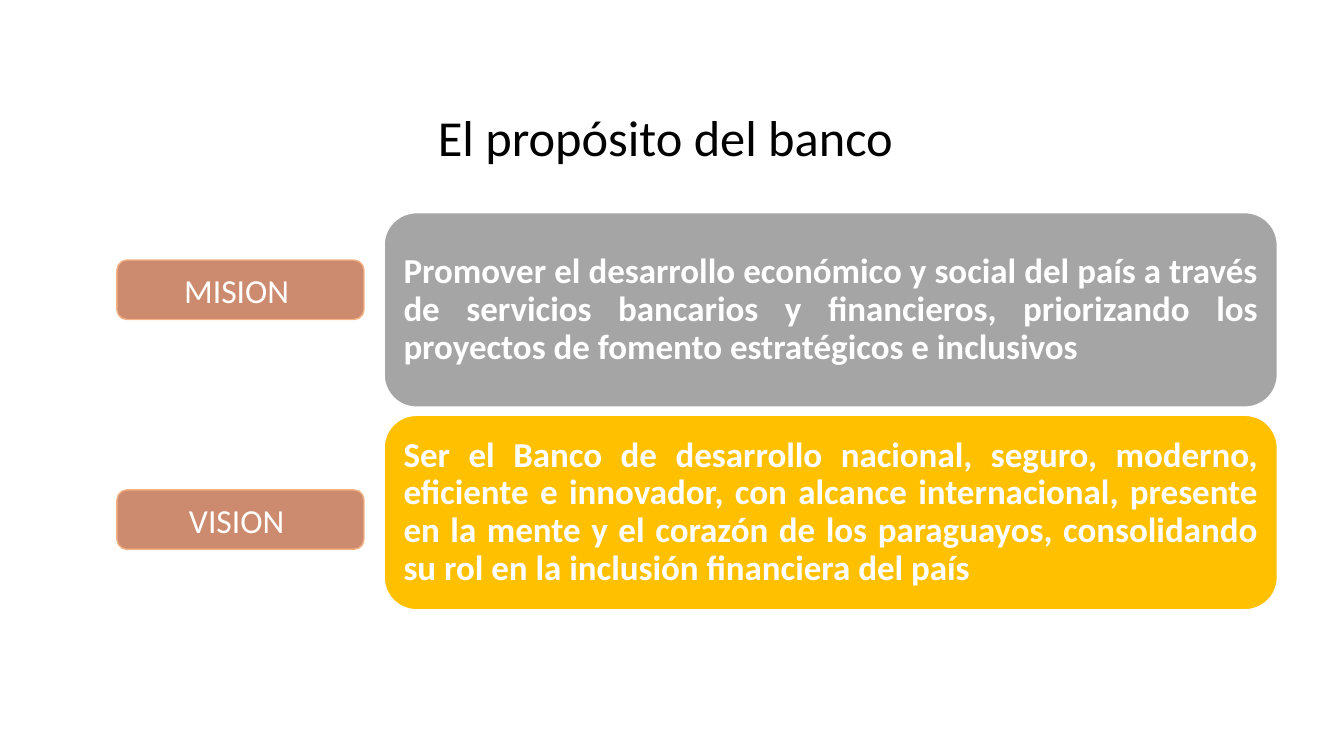
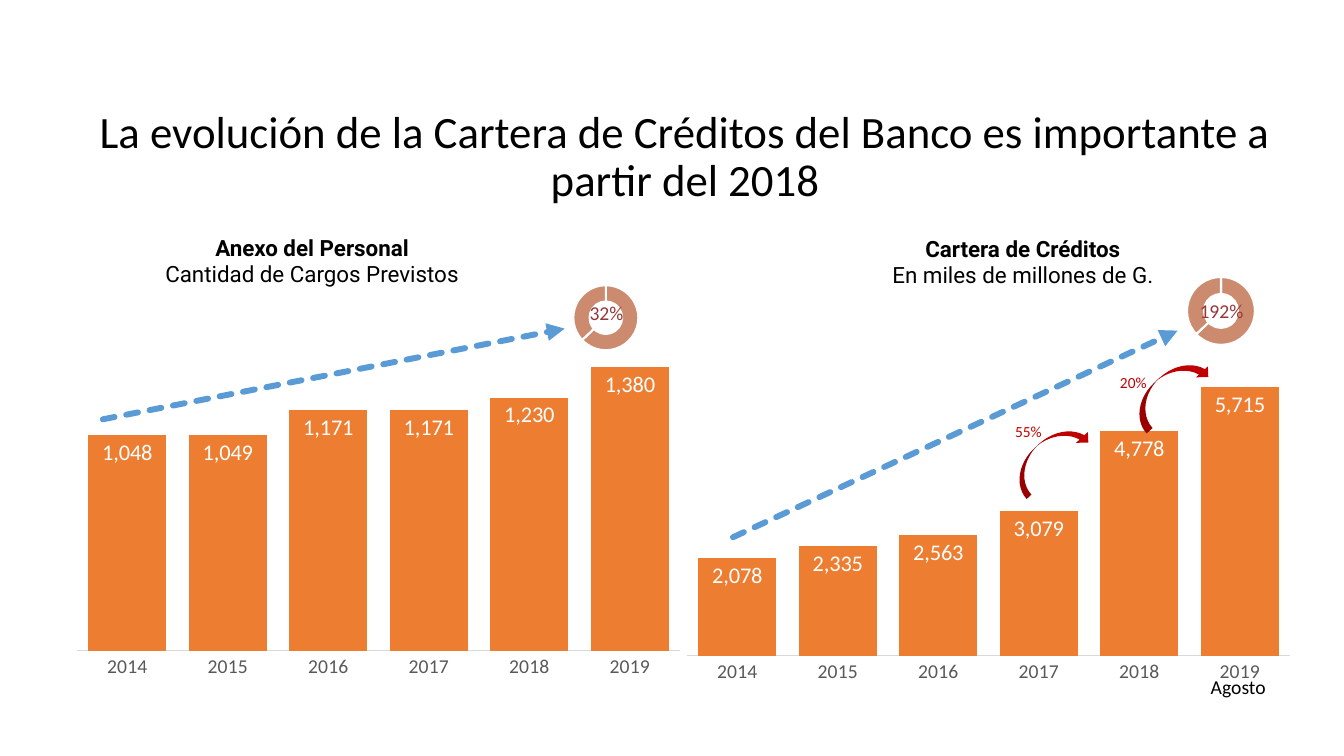
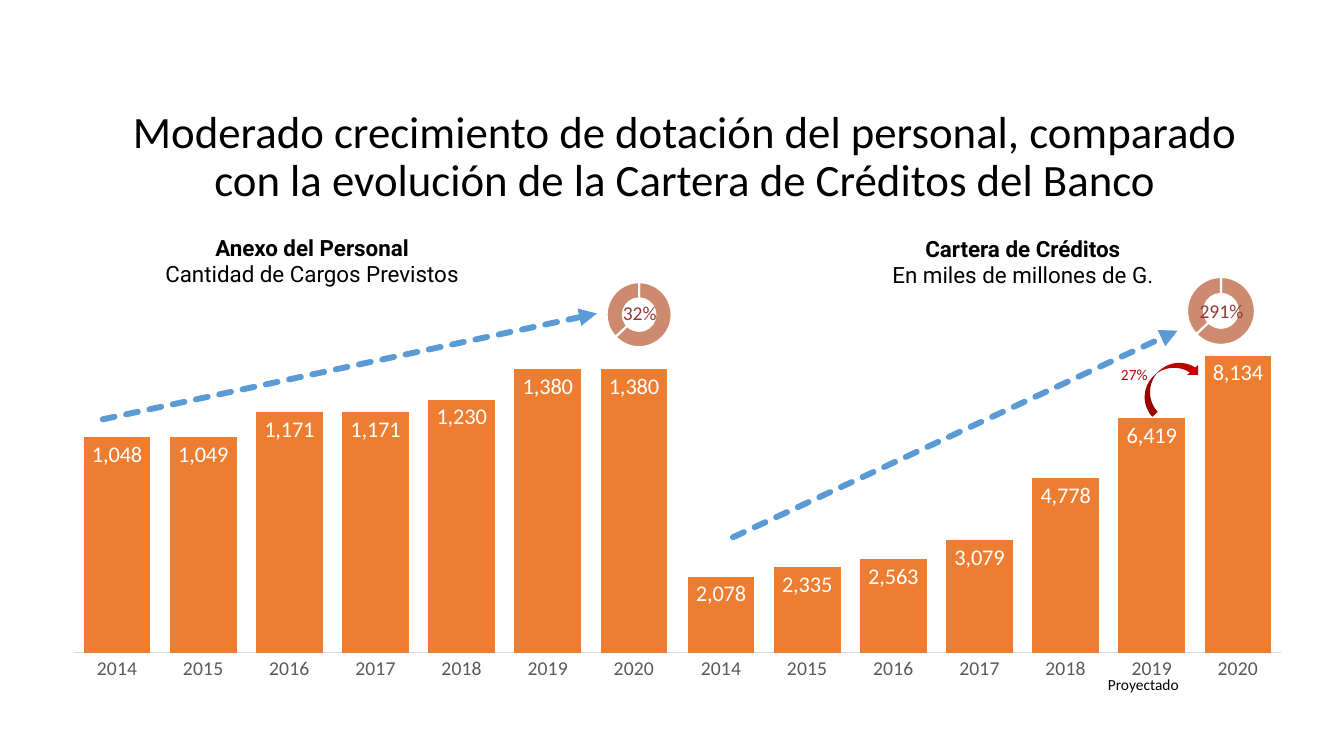
"""Three slides on a bank's purpose, staff and loan book."""
from dataclasses import dataclass

from lxml.etree import SubElement as Sub
from pptx import Presentation
from pptx.chart.data import CategoryChartData as Data
from pptx.dml.color import RGBColor as Rgb
from pptx.enum.chart import XL_CHART_TYPE as Kind
from pptx.enum.chart import XL_LABEL_POSITION as Spot
from pptx.enum.chart import XL_TICK_MARK as Tick
from pptx.enum.shapes import MSO_CONNECTOR as Link
from pptx.enum.shapes import MSO_SHAPE as Form
from pptx.enum.text import MSO_ANCHOR as Anchor
from pptx.enum.text import PP_ALIGN as Align
from pptx.oxml.ns import qn
from pptx.util import Pt

SCALE = 9144


@dataclass(frozen=True)
class Theme:
    """Fonts, colours and type sizes."""
    font: str = "Calibri"
    head: str = "Roboto"
    ink: str = "000000"
    white: str = "FFFFFF"
    gray: str = "A5A5A5"
    gold: str = "FFC000"
    clay: str = "CC8B6E"
    peach: str = "F4B183"
    bar: str = "ED7D31"
    axis: str = "595959"
    rule: str = "D9D9D9"
    trend: str = "5B9BD5"
    red: str = "C00000"
    wine: str = "943838"
    big: int = 36
    title: int = 32
    body: int = 25
    tag: int = 24
    label: int = 16
    note: int = 14
    small: int = 11


T = Theme()


def rgb(code):
    """Turn a hex code into a colour."""
    return Rgb.from_string(code)


def px(*vals):
    """Turn px lengths into EMU."""
    return [val * SCALE for val in vals]


def style(font, size, color, name=T.font, bold=False):
    """Set the look of a font."""
    font.size, font.name, font.bold = Pt(size), name, bold
    font.color.rgb = rgb(color)


def write(frame, text, size=T.note, color=T.ink, name=T.font, bold=0,
          align=Align.CENTER, anchor=Anchor.TOP, lead=1.0):
    """Fill a frame; the first `bold` lines are bold."""
    frame.word_wrap = True
    frame.vertical_anchor = anchor
    for num, line in enumerate(text.split("\n")):
        para = frame.add_paragraph() if num else frame.paragraphs[0]
        para.alignment, para.line_spacing = align, lead
        run = para.add_run()
        run.text = line
        style(run.font, size, color, name, num < bold)


class Deck:
    """Holds the file and the current slide."""

    def __init__(self):
        """Open an empty wide deck."""
        self.file = Presentation()
        self.file.slide_width, self.file.slide_height = px(1333, 750)
        self.slide = None

    def page(self, title, box, size=T.title):
        """Start a slide with its title."""
        self.slide = self.file.slides.add_slide(self.file.slide_layouts[6])
        self.text(title, *box, size=size, anchor=Anchor.MIDDLE, lead=0.9)

    def text(self, text, x, y, w, h, **fmt):
        """Add a text box."""
        box = self.slide.shapes.add_textbox(*px(x, y, w, h))
        write(box.text_frame, text, **fmt)

    def shape(self, form, x, y, w, h, fill, edge=None):
        """Add a flat preset shape."""
        item = self.slide.shapes.add_shape(form, *px(x, y, w, h))
        item.shadow.inherit = False
        item.fill.solid()
        item.fill.fore_color.rgb = rgb(fill)
        if edge:
            item.line.color.rgb = rgb(edge)
            item.line.width = Pt(1)
        else:
            item.line.fill.background()
        return item

    def panel(self, text, x, y, w, h, fill, edge=T.white, **fmt):
        """Add a rounded panel with text."""
        item = self.shape(Form.ROUNDED_RECTANGLE, x, y, w, h, fill, edge)
        write(item.text_frame, text, color=T.white, anchor=Anchor.MIDDLE, **fmt)

    def bend(self, x, y, w, h, thick=0.25):
        """Add a curved growth arrow."""
        item = self.shape(Form.CURVED_LEFT_ARROW, x, y, w, h, T.red)
        item.adjustments[0] = thick
        item.rotation = 227.5

    def trend(self, *ends):
        """Add a dashed trend arrow."""
        line = self.slide.shapes.add_connector(Link.STRAIGHT, *px(*ends))
        line.line.color.rgb = rgb(T.trend)
        line.line.width = Pt(4.25)
        prop = line.element.spPr
        edge = prop.find(qn("a:ln"))
        edge.set("cap", "rnd")
        Sub(edge, qn("a:prstDash"), val="sysDash")
        Sub(edge, qn("a:tailEnd"), type="triangle")
        Sub(prop, qn("a:effectLst"))

    def chart(self, kind, cats, vals, x, y, w, h):
        """Add a one-series chart."""
        data = Data(number_format="#,##0")
        data.categories = cats
        data.add_series("Series 1", vals)
        chart = self.slide.shapes.add_chart(kind, *px(x, y, w, h), data).chart
        chart.has_legend = chart.has_title = False
        style(chart.font, 10, T.ink)
        return chart

    def bars(self, x, y, vals, top):
        """Add a column chart of years from 2014."""
        cats = [str(2014 + num) for num in range(len(vals))]
        chart = self.chart(Kind.COLUMN_CLUSTERED, cats, vals, x, y, 623, 369)
        cat, val = chart.category_axis, chart.value_axis
        cat.major_tick_mark = cat.minor_tick_mark = Tick.NONE
        style(cat.tick_labels.font, T.note, T.axis)
        cat.format.line.color.rgb = rgb(T.rule)
        cat.format.line.width = Pt(0.75)
        val.visible = val.has_major_gridlines = False
        val.minimum_scale, val.maximum_scale = 0, top
        plot = chart.plots[0]
        plot.gap_width, plot.overlap = 29, -27
        plot.vary_by_categories = False
        fill = plot.series[0].format.fill
        fill.solid()
        fill.fore_color.rgb = rgb(T.bar)
        plot.has_data_labels = True
        tags = plot.data_labels
        tags.show_value, tags.position = True, Spot.INSIDE_END
        tags.number_format, tags.number_format_is_linked = "#,##0", False
        style(tags.font, T.label, T.white)

    def ring(self, x, y, inner=None):
        """Add a small ring chart."""
        chart = self.chart(Kind.DOUGHNUT, ["1", "2"], [63, 37], x, y, 118, 95)
        plot = chart.plots[0]
        plot.vary_by_categories = False
        for num in range(2):
            part = plot.series[0].points[num].format
            part.fill.solid()
            part.fill.fore_color.rgb = rgb(T.clay)
            part.line.color.rgb = rgb(T.white)
            part.line.width = Pt(1.5)
        root = chart.element
        next(root.iter(qn("c:holeSize"))).set("val", "75")
        if inner:
            area = next(root.iter(qn("c:plotArea")))
            for old in area.findall(qn("c:layout")):
                area.remove(old)
            lay = Sub(area, qn("c:layout"))
            area.insert(0, lay)
            man = Sub(lay, qn("c:manualLayout"))
            Sub(man, qn("c:layoutTarget"), val="inner")
            for key in ("xMode", "yMode"):
                Sub(man, qn("c:" + key), val="edge")
            for key, val in zip("xywh", inner):
                Sub(man, qn("c:" + key), val=str(val))

    def growth(self, title, staff, loans, shift, rise):
        """Build a slide that sets staff beside loans."""
        self.page(title, (85, 103, 1189, 107))
        self.bars(*loans)
        self.bars(*staff)
        self.ring(1152, 261)
        self.ring(526 + shift, 264 - shift // 11, (0.36, 0.2, 0.55, 0.68))
        for x, y, text in (
            (145, 227, "Anexo del Personal\nCantidad de Cargos Previstos"),
            (850, 228, "Cartera de Créditos\nEn miles de millones de G."),
        ):
            self.text(text, x, y, 329, 64, size=T.label, name=T.head, bold=1)
        self.text(rise, 1179, 292, 65, 34, color=T.wine)
        self.text("32%", 569 + shift, 294, 65, 34, color=T.wine)
        self.trend(727, 533, 1168, 328)

    def step(self, text, x, y):
        """Label one yearly rise."""
        self.text(text, x, y, 57, 29, size=T.small, color=T.red, align=Align.LEFT)


def main():
    """Build and save the deck."""
    deck = Deck()
    deck.page("El propósito del banco", (85, 106, 1150, 67), T.big)
    for tag, y, text, top, fill in (
        ("MISION ", 258, "Promover el desarrollo económico y social del país a "
         "través de servicios bancarios y financieros, priorizando los "
         "proyectos de fomento estratégicos e inclusivos", 211, T.gray),
        ("VISION ", 486, "Ser el Banco de desarrollo nacional, seguro, moderno, "
         "eficiente e innovador, con alcance internacional, presente en la "
         "mente y el corazón de los paraguayos, consolidando su rol en la "
         "inclusión financiera del país", 412, T.gold),
    ):
        deck.panel(text, 381, top, 886, 193, fill, size=T.body, bold=1,
                   align=Align.JUSTIFY, lead=0.9)
        deck.panel(tag, 116, y, 245, 59, T.clay, T.peach, size=T.tag)

    staff = [1048, 1049, 1171, 1171, 1230, 1380]
    loans = [2078, 2335, 2563, 3079, 4778]
    deck.growth("La evolución de la Cartera de Créditos del Banco es "
                "importante a partir del 2018", (64, 312, staff, 1600),
                (669, 317, loans + [5715], 7000), 0, "192%")
    deck.trend(102, 416, 560, 326)
    deck.bend(1025, 407, 32, 91, 0.2)
    deck.bend(1144, 342, 32, 91)
    deck.step("55%", 997, 414)
    deck.step("20%", 1101, 365)
    deck.text("Agosto", 1191, 665, 106, 34, align=Align.LEFT)

    deck.growth("Moderado crecimiento de dotación del personal, comparado con "
                "la evolución de la Cartera de Créditos del Banco",
                (61, 314, staff + [1380], 1600),
                (660, 314, loans + [6419, 8134], 9000), 33, "291%")
    deck.trend(102, 416, 592, 311)
    deck.bend(1144, 345, 29, 69)
    deck.step("27%", 1102, 357)
    deck.text("Proyectado", 1089, 665, 106, 29, size=T.small, align=Align.LEFT)
    deck.file.save("out.pptx")


if __name__ == "__main__":
    main()
